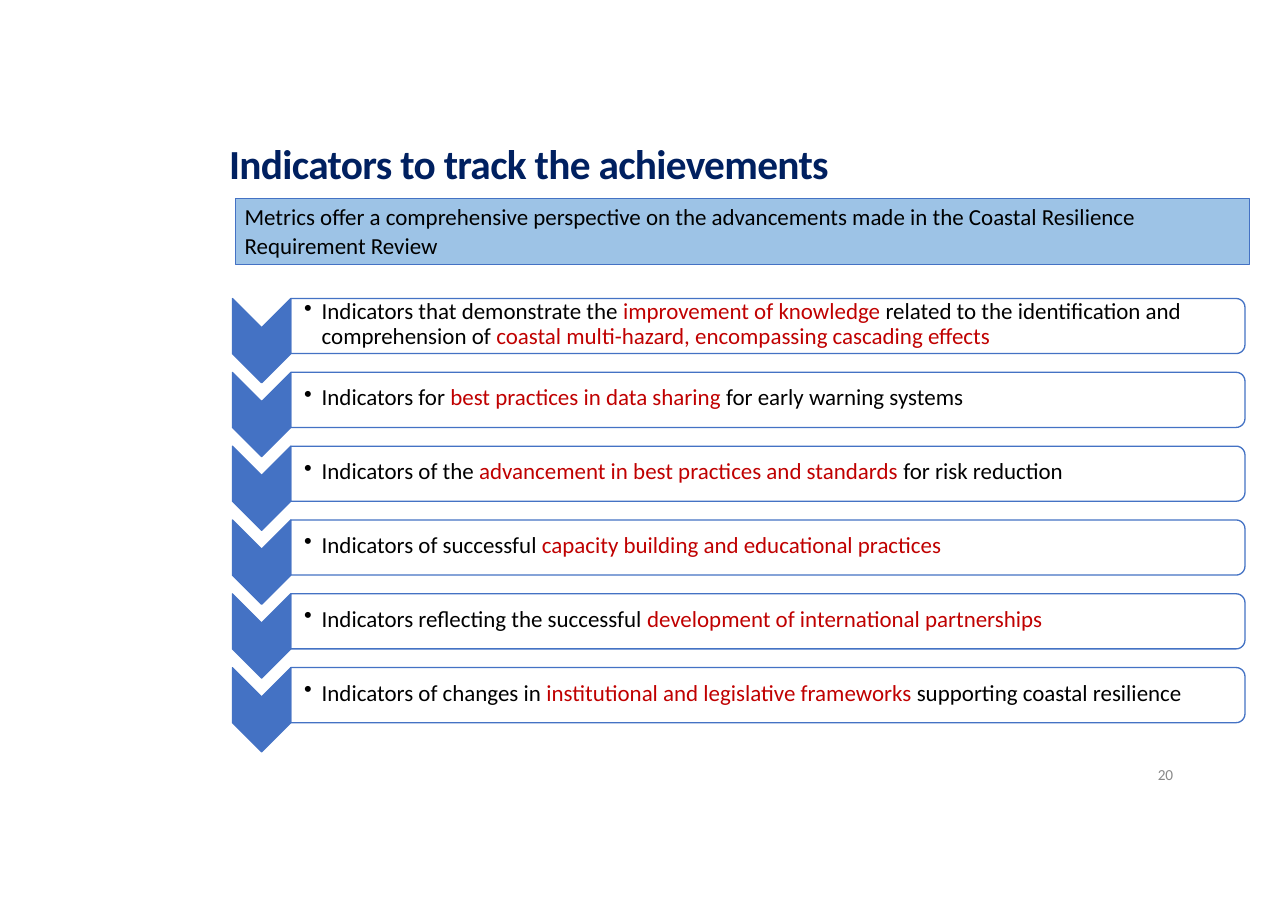
from dataclasses import dataclass
from math import cos, radians, sin

from lxml.etree import SubElement
from pptx import Presentation
from pptx.dml.color import RGBColor
from pptx.enum.shapes import MSO_SHAPE as Shape
from pptx.enum.text import MSO_ANCHOR as Anchor, MSO_AUTO_SIZE as AutoSize, PP_ALIGN as Align
from pptx.oxml.ns import qn
from pptx.util import Inches, Pt


@dataclass(frozen=True)
class Theme:
    font: str = "Calibri"
    navy: str = "002060"
    blue: str = "4472C4"
    pale_blue: str = "9DC3E6"
    black: str = "000000"
    red: str = "C00000"
    gray: str = "898989"
    title_size: float = 27
    body_size: float = 15
    number_size: float = 10


theme = Theme()


def write(box, spans, size=theme.body_size, colors=(theme.black, theme.red), bold=False,
          spacing=0, insets=(0, 0, 0, 0), anchor=Anchor.TOP, line_spacing=1.0, bullet=False):
    frame = box.text_frame
    frame.word_wrap = True
    frame.auto_size = AutoSize.NONE
    frame.vertical_anchor = anchor
    frame.margin_left, frame.margin_top, frame.margin_right, frame.margin_bottom = map(Inches, insets)
    para = frame.paragraphs[0]
    if bullet:
        properties = para._p.get_or_add_pPr()
        properties.set("marL", str(Inches(0.16)))
        properties.set("indent", str(-Inches(0.16)))
        SubElement(properties, qn("a:buChar")).set("char", "•")
    para.alignment = Align.LEFT
    para.line_spacing = line_spacing
    para.space_before = Pt(0)
    for index, text in enumerate(spans):
        span = para.add_run()
        span.text = text
        span.font.name = theme.font
        span.font.size = Pt(size)
        span.font.bold = bold
        span.font.color.rgb = RGBColor.from_string(colors[index % len(colors)])
        if spacing:
            span._r.get_or_add_rPr().set("spc", str(round(spacing * 100)))


def outline(shapes, points, fill=None, line_width=0.85):
    corners = [(Inches(x), Inches(y)) for x, y in points]
    builder = shapes.build_freeform(*corners[0])
    builder.add_line_segments(corners[1:], close=True)
    shape = builder.convert_to_shape()
    shape.shadow.inherit = False
    if fill:
        shape.fill.solid()
        shape.fill.fore_color.rgb = RGBColor.from_string(fill)
    else:
        shape.fill.background()
    shape.line.color.rgb = RGBColor.from_string(theme.blue)
    shape.line.width = Pt(line_width)
    return shape


deck = Presentation()
deck.slide_width, deck.slide_height = Inches(11.69), Inches(8.26)
page = deck.slides.add_slide(deck.slide_layouts[5])
shapes = page.shapes

title = shapes.title
title.left, title.top, title.width, title.height = map(Inches, (2.08, 1.23, 6.26, 0.48))
write(title, ["Indicators to track the achievements"], size=theme.title_size,
      colors=[theme.navy], bold=True, spacing=-0.45, insets=(0, 0.02, 0, 0))

banner = shapes.add_shape(Shape.RECTANGLE, Inches(2.14), Inches(1.8), Inches(9.2), Inches(0.6))
banner.shadow.inherit = False
banner.fill.solid()
banner.fill.fore_color.rgb = RGBColor.from_string(theme.pale_blue)
banner.line.color.rgb = RGBColor.from_string(theme.blue)
banner.line.width = Pt(0.64)
write(banner, ["Metrics offer a comprehensive perspective on the advancements made in the "
               "Coastal Resilience Requirement Review"],
      insets=(0.08, 0.03, 0, 0), line_spacing=1.05)

indicators = [
    ["Indicators that demonstrate the ", "improvement of knowledge ",
     "related to the identification and comprehension of ",
     "coastal multi-hazard, encompassing cascading effects"],
    ["Indicators for ", "best practices in data sharing ", "for early warning systems"],
    ["Indicators of the ", "advancement in best practices and standards ", "for risk reduction"],
    ["Indicators of successful ", "capacity building and educational practices"],
    ["Indicators reflecting the successful ", "development of international partnerships"],
    ["Indicators of changes in ", "institutional and legislative frameworks ",
     "supporting coastal resilience"],
]
first_top, row_pitch, card_height = 2.71, 0.67, 0.5
chevron_left, card_left, card_right = 2.11, 2.64, 11.3
chevron_middle = (chevron_left + card_left) / 2
point_depth, corner_radius = 0.265, 0.08

for row, spans in enumerate(indicators):
    top = first_top + row * row_pitch
    bottom = top + card_height
    outline(shapes, [
        (chevron_left, top), (chevron_middle, top + point_depth), (card_left, top),
        (card_left, bottom), (chevron_middle, bottom + point_depth), (chevron_left, bottom),
    ], fill=theme.blue)

    corner_x = card_right - corner_radius
    arc = [(corner_x + corner_radius * sin(radians(angle)),
            corner_radius * (1 - cos(radians(angle)))) for angle in range(0, 91, 15)]
    upper_corner = [(x, top + drop) for x, drop in arc]
    lower_corner = [(x, bottom - drop) for x, drop in reversed(arc)]
    card = outline(shapes, [(card_left, top), *upper_corner, *lower_corner, (card_left, bottom)])
    write(card, spans, insets=(0.12, 0, 0.1, 0.03), anchor=Anchor.MIDDLE,
          line_spacing=Pt(16.1), bullet=True)

number = shapes.add_textbox(Inches(10.51), Inches(6.93), Inches(0.24), Inches(0.2))
write(number, ["20"], size=theme.number_size, colors=[theme.gray], spacing=-0.2,
      insets=(0, 0.02, 0, 0))

deck.save("out.pptx")
